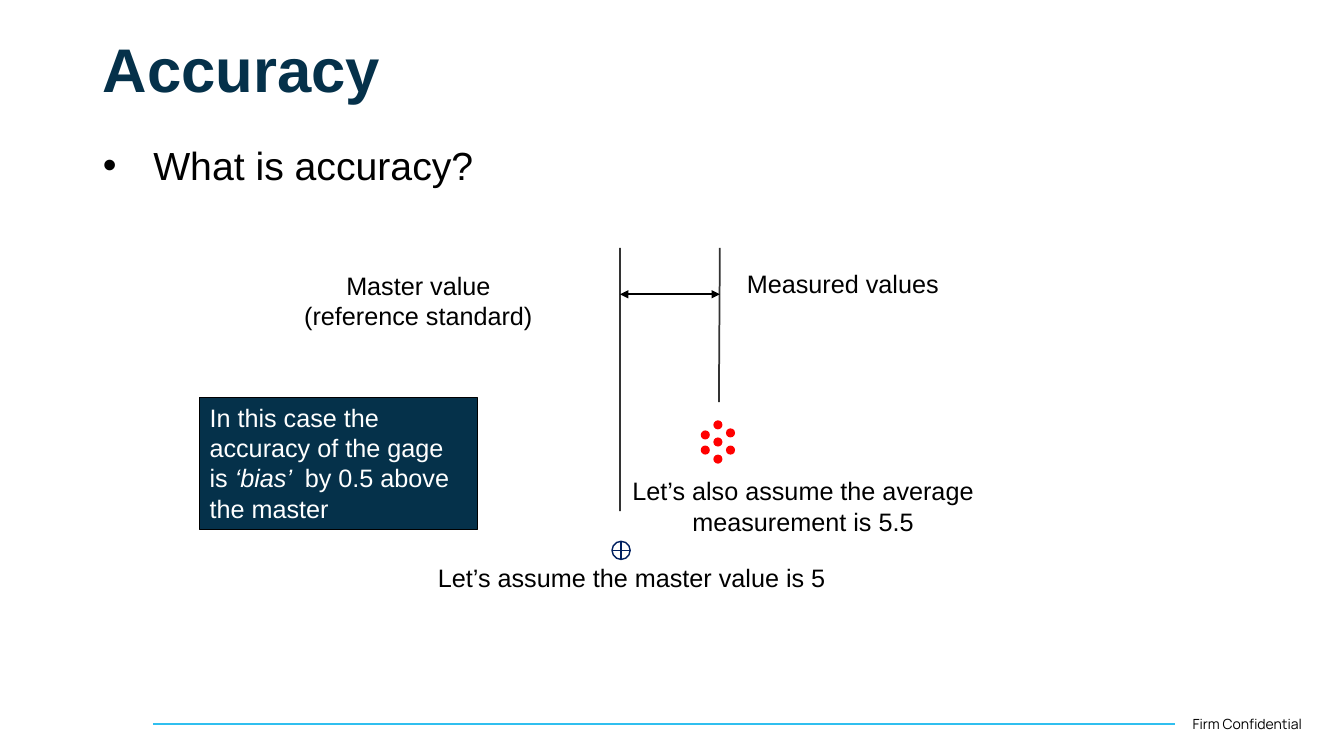
from lxml import etree
from pptx import Presentation
from pptx.dml.color import RGBColor
from pptx.enum.shapes import MSO_CONNECTOR, MSO_SHAPE
from pptx.enum.text import MSO_ANCHOR, MSO_AUTO_SIZE, PP_ALIGN
from pptx.oxml.ns import qn
from pptx.util import Inches, Pt

NAVY = RGBColor(0x05, 0x31, 0x4A)
MARK_BLUE = RGBColor(0x00, 0x20, 0x60)
CYAN = RGBColor(0x30, 0xBF, 0xEF)
RED = RGBColor(0xFF, 0x00, 0x00)
BLACK = RGBColor(0x00, 0x00, 0x00)
WHITE = RGBColor(0xFF, 0xFF, 0xFF)

LEFT, CENTER = PP_ALIGN.LEFT, PP_ALIGN.CENTER
TOP, MIDDLE = MSO_ANCHOR.TOP, MSO_ANCHOR.MIDDLE
NO_FIT, GROW = MSO_AUTO_SIZE.NONE, MSO_AUTO_SIZE.SHAPE_TO_FIT_TEXT
STRAIGHT = MSO_CONNECTOR.STRAIGHT
RECTANGLE, DOT, TARGET = (MSO_SHAPE.RECTANGLE, MSO_SHAPE.FLOWCHART_CONNECTOR,
                          MSO_SHAPE.FLOWCHART_OR)

TITLE_FONT = {"name": "Arial", "size": Pt(44), "bold": True}
BODY_FONT = {"name": "Arial", "size": Pt(28)}
LABEL_FONT = {"name": "Arial", "size": Pt(18)}
FOOTER_FONT = {"name": "Manrope", "size": Pt(10)}


def set_font(font, color, formats):
    for attribute, value in formats.items():
        setattr(font, attribute, value)
    font.color.rgb = color


def place(shape, box):
    for attribute, value in zip(("left", "top", "width", "height"), box):
        setattr(shape, attribute, Inches(value))


def add_line(slide, start, end, color, width, opacity=None, arrows=False):
    line = slide.shapes.add_connector(
        STRAIGHT, *(Inches(value) for value in (*start, *end)))
    line.line.color.rgb = color
    line.line.width = Pt(width)
    outline = line.line._get_or_add_ln()
    if opacity:
        etree.SubElement(outline.find(".//" + qn("a:srgbClr")), qn("a:alpha"),
                         val=str(opacity * 1000))
    if arrows:
        for end_tag in ("a:headEnd", "a:tailEnd"):
            etree.SubElement(outline, qn(end_tag), type="triangle")
    etree.SubElement(line._element.spPr, qn("a:effectLst"))


def add_preset(slide, preset, box, fill=None, outline=None, width=1):
    shape = slide.shapes.add_shape(preset, *(Inches(value) for value in box))
    shape.shadow.inherit = False
    if fill is None:
        shape.fill.background()
    else:
        shape.fill.solid()
        shape.fill.fore_color.rgb = fill
    if outline is None:
        shape.line.fill.background()
    else:
        shape.line.color.rgb = outline
        shape.line.width = Pt(width)
    return shape


def add_label(slide, box, lines, align=LEFT, formats=LABEL_FONT):
    label = slide.shapes.add_textbox(*(Inches(value) for value in box))
    frame = label.text_frame
    frame.word_wrap = True
    frame.auto_size = GROW
    frame.text = "\n".join(lines)
    for paragraph in frame.paragraphs:
        paragraph.alignment = align
        set_font(paragraph.font, BLACK, formats)


def fill_title(title, box):
    place(title, box)
    frame = title.text_frame
    frame.text = "Accuracy"
    frame.auto_size = NO_FIT
    frame.vertical_anchor = MIDDLE
    paragraph = frame.paragraphs[0]
    paragraph.alignment = LEFT
    paragraph.line_spacing = 0.9
    set_font(paragraph.font, NAVY, TITLE_FONT)


def fill_question(body, box):
    place(body, box)
    frame = body.text_frame
    frame.text = "What is accuracy?"
    frame.auto_size = NO_FIT
    frame.vertical_anchor = TOP
    paragraph = frame.paragraphs[0]
    paragraph.space_before = Pt(0)
    properties = paragraph._p.get_or_add_pPr()
    properties.set("marL", str(Inches(0.5)))
    properties.set("indent", str(Inches(-0.5)))
    etree.SubElement(properties, qn("a:buFont"), typeface="Arial")
    etree.SubElement(properties, qn("a:buChar"), char="•")
    set_font(paragraph.font, BLACK, BODY_FONT)


def add_measurements(slide, left, top):
    """Cluster of measured points: one column of three between two pairs."""
    size, step = 0.09, 0.125
    offsets = [(0, 0.1), (0, 0.25), (2, 0.08), (2, 0.25),
               (1, 0), (1, 0.17), (1, 0.34)]
    for column, drop in offsets:
        add_preset(slide, DOT, (left + column * step, top + drop, size, size), RED)


def add_bias_diagram(slide, left, top):
    """Master and measured lines; left and top locate the master line's top."""
    measured = left + 0.99
    arrow_y = top + 0.46
    add_line(slide, (left, top + 2.61), (left, top), BLACK, 1.25, opacity=80)
    add_line(slide, (measured - 0.01, top + 1.53), (measured, top), BLACK, 1.25,
             opacity=80)
    add_line(slide, (left, arrow_y), (measured, arrow_y), BLACK, 1.25, arrows=True)
    add_measurements(slide, left + 0.8, top + 1.71)
    add_preset(slide, TARGET, (left - 0.08, top + 2.91, 0.18, 0.18),
               outline=MARK_BLUE)
    add_label(slide, (left + 1.16, top + 0.15, 3.36, 0.4), ["Measured values"])
    add_label(slide, (left - 3.92, top + 0.17, 3.84, 0.71),
              ["Master value", "(reference standard)"], CENTER)
    add_label(slide, (left - 2.2, top + 3.07, 4.63, 0.4),
              ["Let’s assume the master value is 5"], CENTER)
    add_label(slide, (left - 0.14, top + 2.21, 3.91, 0.71),
              ["Let’s also assume the average measurement is 5.5"], CENTER)


def add_conclusion(slide, box):
    panel = add_preset(slide, RECTANGLE, box, NAVY, BLACK, 0.5)
    frame = panel.text_frame
    frame.word_wrap = True
    frame.auto_size = GROW
    frame.vertical_anchor = TOP
    paragraph = frame.paragraphs[0]
    paragraph.alignment = LEFT
    for text, italic in (("In this case the accuracy of the gage is ", False),
                         ("‘bias’ ", True),
                         (" by 0.5 above the master", False)):
        run = paragraph.add_run()
        run.text = text
        set_font(run.font, WHITE, {**LABEL_FONT, "italic": italic})


def add_footer(slide, left, middle):
    add_line(slide, (left, middle), (left + 10.13, middle), CYAN, 1.5)
    add_label(slide, (left + 10.21, middle - 0.13, 1.48, 0.27),
              ["Firm Confidential"], formats=FOOTER_FONT)


def main():
    presentation = Presentation()
    presentation.slide_width = Inches(13.33)
    presentation.slide_height = Inches(7.5)
    slide = presentation.slides.add_slide(presentation.slide_layouts[1])
    add_footer(slide, 1.52, 7.18)
    fill_title(slide.shapes.title, (0.92, 0.28, 11.5, 0.88))
    fill_question(slide.placeholders[1], (0.92, 1.35, 9, 3.33))
    add_bias_diagram(slide, 6.15, 2.46)
    add_conclusion(slide, (1.98, 3.94, 2.75, 1.31))
    presentation.save("out.pptx")


if __name__ == "__main__":
    main()
